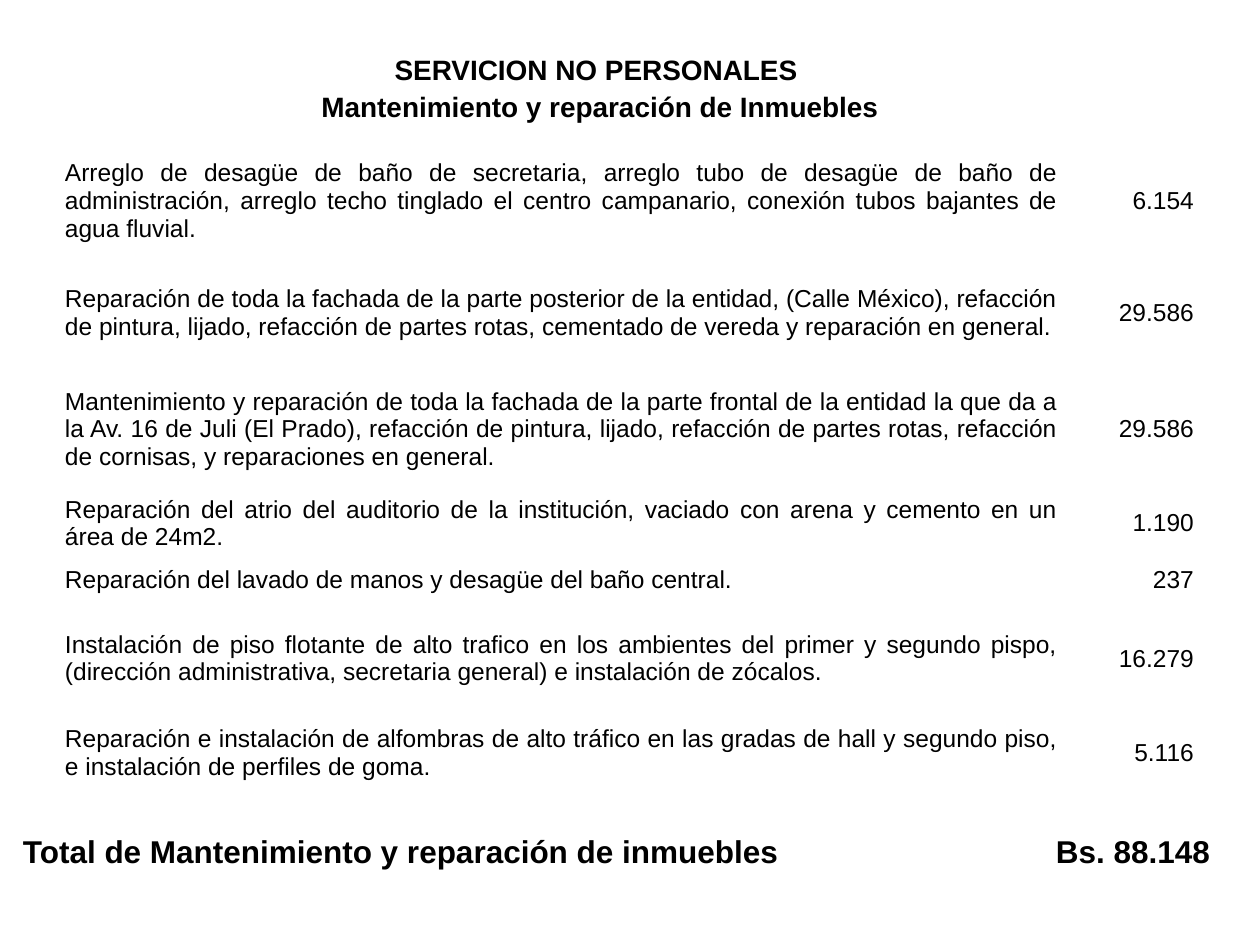
from pptx import Presentation
from pptx.dml.color import RGBColor
from pptx.enum.text import MSO_ANCHOR, PP_ALIGN
from pptx.util import Emu, Pt

LEFT, CENTER, RIGHT, JUSTIFY = PP_ALIGN.LEFT, PP_ALIGN.CENTER, PP_ALIGN.RIGHT, PP_ALIGN.JUSTIFY
MIDDLE, BOTTOM = MSO_ANCHOR.MIDDLE, MSO_ANCHOR.BOTTOM
EMU_PER_PX = 914400 / 126
COLORS = {"text": "000000"}
FONT = "Arial"

REPAIRS = [
    ("Arreglo de desagüe de baño de secretaria, arreglo tubo de desagüe de baño de "
     "administración, arreglo techo tinglado el centro campanario, conexión tubos "
     "bajantes de agua fluvial.", "6.154"),
    ("Reparación de toda la fachada de la parte posterior de la entidad, (Calle México), "
     "refacción de pintura, lijado, refacción de partes rotas, cementado de vereda y "
     "reparación en general.", "29.586"),
    ("Mantenimiento y reparación de toda la fachada de la parte frontal de la entidad la "
     "que da a la Av. 16 de Juli (El Prado), refacción de pintura, lijado, refacción de "
     "partes rotas, refacción de cornisas, y reparaciones en general.", "29.586"),
    ("Reparación del atrio del auditorio de la institución, vaciado con arena y cemento "
     "en un área de 24m2.", "1.190"),
    ("Reparación del lavado de manos y desagüe del baño central.", "237"),
    ("Instalación de piso flotante de alto trafico en los ambientes del primer y segundo "
     "pispo, (dirección administrativa, secretaria general) e instalación de zócalos.",
     "16.279"),
    ("Reparación e instalación de alfombras de alto tráfico en las gradas de hall y "
     "segundo piso, e instalación de perfiles de goma.", "5.116"),
]


def px(length):
    return Emu(round(length * EMU_PER_PX))


class SlideBuilder:
    def __init__(self, page):
        self.page = page

    def table(self, left, top, widths, heights, rows, aligns, size, bold=False):
        frame = self.page.shapes.add_table(
            len(rows), len(widths), px(left), px(top), px(sum(widths)), px(sum(heights)))
        table = frame.table
        table.first_row = table.horz_banding = False
        for column, width in zip(table.columns, widths):
            column.width = px(width)
        for row, height, texts in zip(table.rows, heights, rows):
            row.height = px(height)
            for cell, text, align in zip(row.cells, texts, aligns):
                self.cell(cell, text, align, size, bold)
        return table

    def cell(self, cell, text, align, size, bold):
        cell.fill.background()
        cell.vertical_anchor = MIDDLE
        cell.margin_left = cell.margin_right = cell.margin_top = px(1)
        cell.margin_bottom = 0
        para = cell.text_frame.paragraphs[0]
        para.alignment = align
        span = para.add_run()
        span.text = text
        span.font.name = FONT
        span.font.size = Pt(size)
        span.font.bold = bold
        span.font.color.rgb = RGBColor.from_string(COLORS["text"])


def main():
    deck = Presentation()
    deck.slide_width, deck.slide_height = px(1260), px(945)
    builder = SlideBuilder(deck.slides.add_slide(deck.slide_layouts[6]))

    builder.table(64, 139, [995, 136], [123, 101, 132, 45, 57, 100, 89],
                  REPAIRS, [JUSTIFY, RIGHT], 14)

    heading = builder.table(25, 54, [1150], [32, 43],
                            [["SERVICION NO PERSONALES "],
                             ["Mantenimiento y reparación de Inmuebles"]],
                            [CENTER], 16, bold=True)
    heading.cell(0, 0).vertical_anchor = BOTTOM

    total = builder.table(-10, 807, [1032, 189], [90],
                          [["Total de Mantenimiento y reparación de inmuebles", "Bs. 88.148"]],
                          [LEFT, RIGHT], 18, bold=True)
    total.cell(0, 0).margin_left = px(33)

    deck.save("out.pptx")


if __name__ == "__main__":
    main()
